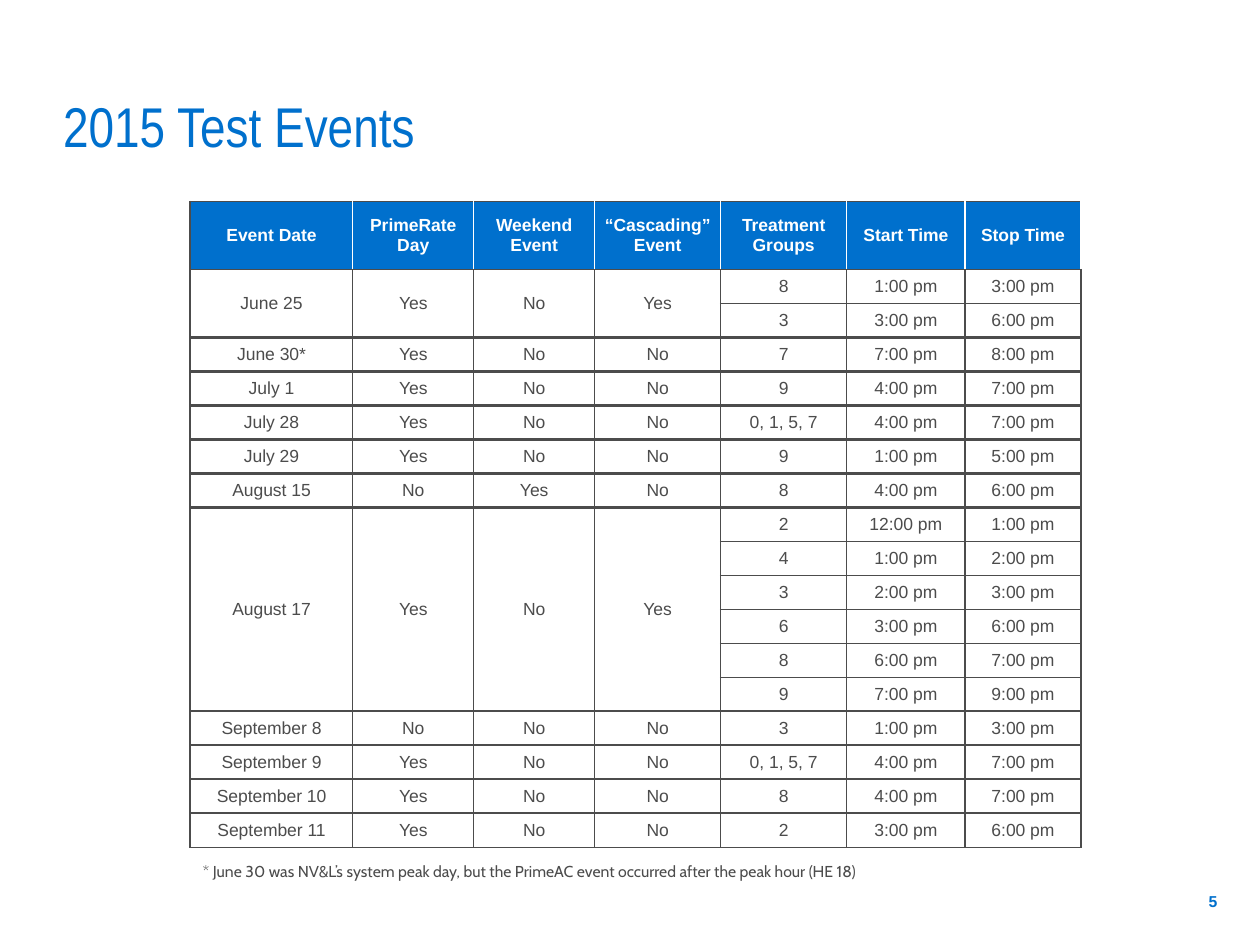
from lxml import etree
from pptx import Presentation
from pptx import util as u
from pptx.dml.color import RGBColor
from pptx.enum import text
from pptx.oxml.ns import qn

COLORS = {"blue": "0070CD", "gray": "4C4C4C", "white": "FFFFFF"}

HEADERS = ["Event Date", "PrimeRate Day", "Weekend Event", "“Cascading” Event",
           "Treatment Groups", "Start Time", "Stop Time"]
COLUMN_WIDTHS = [1.29, 0.96, 0.96, 1, 1, 0.94, 0.92]
HEADER_HEIGHT, ROW_HEIGHT = 0.54, 0.27

# Shared day columns, then one (groups, start, stop) row per test
EVENTS = [
    (("June 25", "Yes", "No", "Yes"), [("8", "1:00 pm", "3:00 pm"),
                                       ("3", "3:00 pm", "6:00 pm")]),
    (("June 30*", "Yes", "No", "No"), [("7", "7:00 pm", "8:00 pm")]),
    (("July 1", "Yes", "No", "No"), [("9", "4:00 pm", "7:00 pm")]),
    (("July 28", "Yes", "No", "No"), [("0, 1, 5, 7", "4:00 pm", "7:00 pm")]),
    (("July 29", "Yes", "No", "No"), [("9", "1:00 pm", "5:00 pm")]),
    (("August 15", "No", "Yes", "No"), [("8", "4:00 pm", "6:00 pm")]),
    (("August 17", "Yes", "No", "Yes"), [("2", "12:00 pm", "1:00 pm"),
                                         ("4", "1:00 pm", "2:00 pm"),
                                         ("3", "2:00 pm", "3:00 pm"),
                                         ("6", "3:00 pm", "6:00 pm"),
                                         ("8", "6:00 pm", "7:00 pm"),
                                         ("9", "7:00 pm", "9:00 pm")]),
    (("September 8", "No", "No", "No"), [("3", "1:00 pm", "3:00 pm")]),
    (("September 9", "Yes", "No", "No"), [("0, 1, 5, 7", "4:00 pm", "7:00 pm")]),
    (("September 10", "Yes", "No", "No"), [("8", "4:00 pm", "7:00 pm")]),
    (("September 11", "Yes", "No", "No"), [("2", "3:00 pm", "6:00 pm")]),
]


class EventSlide:
    def __init__(self, deck):
        self.slide = deck.slides.add_slide(deck.slide_layouts[5])

    def set_text(self, frame, words, size, color, font="Arial", bold=False,
                 align=text.PP_ALIGN.LEFT):
        frame.text = words
        frame.word_wrap = True
        paragraph = frame.paragraphs[0]
        paragraph.alignment = align
        paragraph.font.name = font
        paragraph.font.size = u.Pt(size)
        paragraph.font.bold = bold
        paragraph.font.color.rgb = RGBColor.from_string(COLORS[color])

    def title(self, words, left, top, width, height):
        title = self.slide.shapes.title
        title.left, title.top = u.Inches(left), u.Inches(top)
        title.width, title.height = u.Inches(width), u.Inches(height)
        frame = title.text_frame
        self.set_text(frame, words, 32, "blue", "Arial Narrow")
        frame.auto_size = text.MSO_AUTO_SIZE.NONE
        frame.vertical_anchor = text.MSO_ANCHOR.BOTTOM
        frame.margin_left = 0

    def label(self, words, left, top, width, height, **style):
        box = self.slide.shapes.add_textbox(
            u.Inches(left), u.Inches(top), u.Inches(width), u.Inches(height))
        box.text_frame.vertical_anchor = text.MSO_ANCHOR.MIDDLE
        self.set_text(box.text_frame, words, 9, **style)

    def borders(self, cell, **sides):
        """Draw sides L, R, T, B, each given as (colour, points)."""
        properties = cell._tc.get_or_add_tcPr()
        for side in "LRTB":
            if side in sides:
                color, points = sides[side]
                line = etree.SubElement(properties, qn(f"a:ln{side}"),
                                        w=str(u.Pt(points)))
                fill = etree.SubElement(line, qn("a:solidFill"))
                etree.SubElement(fill, qn("a:srgbClr"), val=COLORS[color])

    def cell(self, cell, words, header=False):
        cell.margin_left = cell.margin_right = u.Inches(0.07)
        cell.margin_top = cell.margin_bottom = 0
        cell.vertical_anchor = text.MSO_ANCHOR.MIDDLE
        self.set_text(cell.text_frame, words, 10, "white" if header else "gray",
                      bold=header, align=text.PP_ALIGN.CENTER)
        if header:
            cell.fill.solid()
            cell.fill.fore_color.rgb = RGBColor.from_string(COLORS["blue"])
        else:
            cell.fill.background()

    def event_table(self, left, top):
        count = sum(len(tests) for _, tests in EVENTS)
        table = self.slide.shapes.add_table(
            count + 1, len(HEADERS), u.Inches(left), u.Inches(top),
            u.Inches(sum(COLUMN_WIDTHS)),
            u.Inches(HEADER_HEIGHT + count * ROW_HEIGHT)).table
        table.first_row = table.horz_banding = False
        for column, width in zip(table.columns, COLUMN_WIDTHS):
            column.width = u.Inches(width)
        for row in table.rows:
            row.height = u.Inches(ROW_HEIGHT)
        table.rows[0].height = u.Inches(HEADER_HEIGHT)

        thin, thick, white = ("gray", 1), ("gray", 1.5), ("white", 1)
        for col, words in enumerate(HEADERS):
            self.borders(table.cell(0, col), L=white if col else thin,
                         R=white, T=thin, B=thin)
            self.cell(table.cell(0, col), words, header=True)

        first = 1
        for day, tests in EVENTS:
            last = first + len(tests) - 1
            above = thin if first == 1 else thick
            below = thin if last == count else thick
            for row, test in enumerate(tests, first):
                for col, words in enumerate(day + test):
                    cell = table.cell(row, col)
                    shared = col < len(day)
                    sides = {"L": thin, "R": thin}
                    if row == first or not shared:
                        sides["T"] = above if row == first else thin
                    if row == last or not shared:
                        sides["B"] = below if row == last else thin
                    elif row == first:
                        sides["B"] = below
                    self.borders(cell, **sides)
                    self.cell(cell, words if row == first or not shared else "")
            if last > first:
                for col in range(len(day)):
                    table.cell(first, col).merge(table.cell(last, col))
            first = last + 1


def main():
    deck = Presentation()
    deck.slide_width, deck.slide_height = u.Inches(10), u.Inches(7.5)
    page = EventSlide(deck)
    page.title("2015 Test Events", 0.5, 0.57, 9.01, 0.74)
    page.event_table(1.51, 1.6)
    page.label("5", 9.06, 6.95, 0.7, 0.4, color="blue", bold=True,
               align=text.PP_ALIGN.RIGHT)
    page.label("* June 30 was NV&L’s system peak day, but the PrimeAC event "
               "occurred after the peak hour (HE 18)",
               1.51, 6.79, 7.07, 0.25, color="gray", font="Cabin")
    deck.save("out.pptx")


if __name__ == "__main__":
    main()
